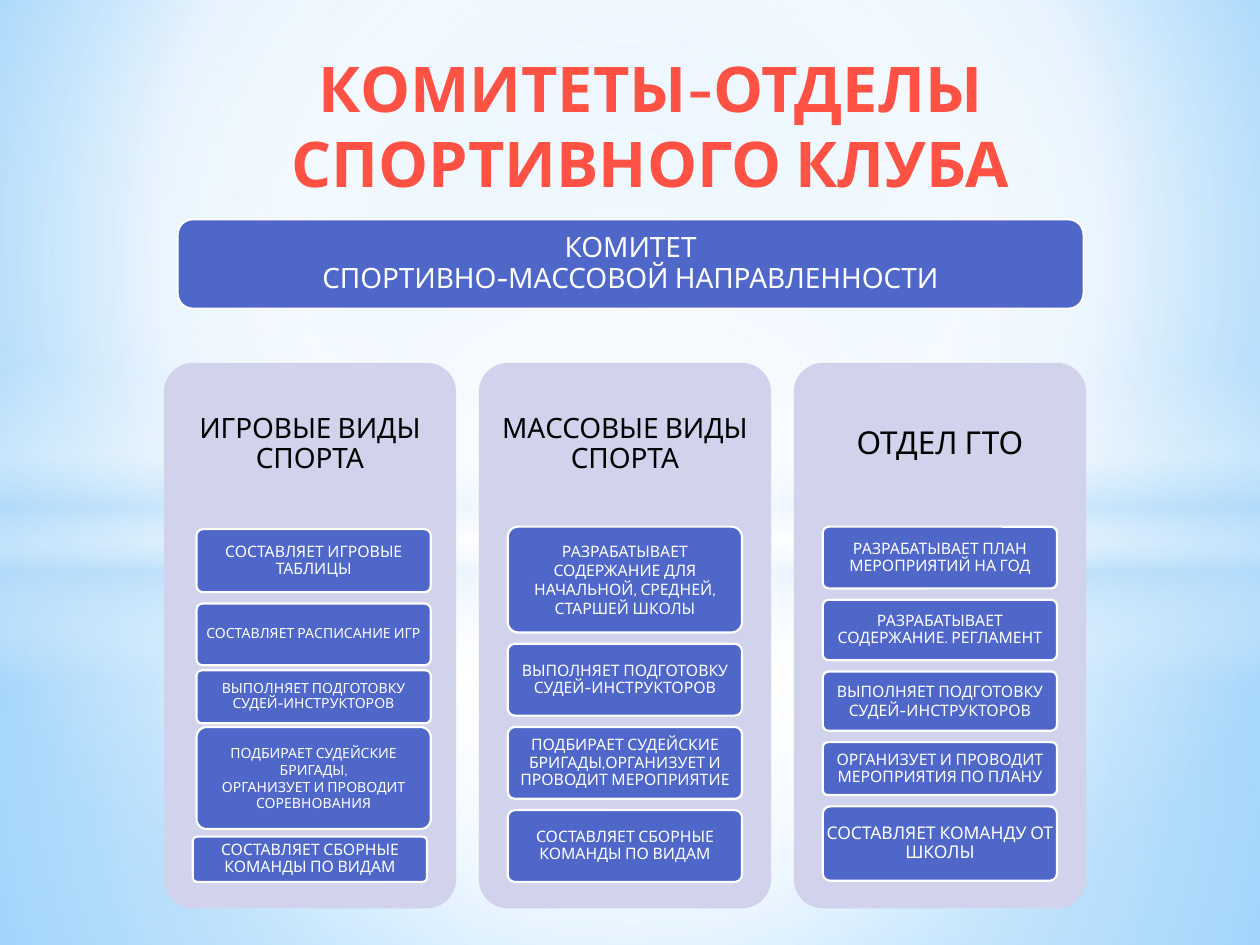
from pptx import Presentation
from pptx.dml.color import RGBColor as RGB
from pptx.enum.shapes import MSO_SHAPE as SHAPE
from pptx.enum.text import MSO_ANCHOR as ANCHOR, PP_ALIGN as ALIGN
from pptx.oxml import parse_xml
from pptx.oxml.ns import nsdecls, qn
from pptx.util import Inches, Pt

C = {"blue": "4E67C8", "card": "D0D3EB", "white": "FFFFFF", "black": "000000",
     "red": "FF5244", "sky": "B4DCFA", "pale": "9ED5FF", "deep": "5BB9FF"}

prs = Presentation()
prs.slide_width, prs.slide_height = Inches(10), Inches(7.5)
U = prs.slide_width / 100
s = prs.slides.add_slide(prs.slide_layouts[5])


def grade(fill, root, stops, rect=None):
    fill.gradient()
    old = next(root.iter(qn("a:gradFill")))
    gs = "".join(f'<a:gs pos="{pos * 1000}"><a:srgbClr val="{C[color]}">'
                 f'<a:alpha val="{alpha * 1000}"/></a:srgbClr></a:gs>'
                 for pos, color, alpha in stops)
    if rect:
        sides = " ".join(f'{side}="{v * 1000}"' for side, v in zip("ltrb", rect))
        way = f'<a:path path="circle"><a:fillToRect {sides}/></a:path>'
    else:
        way = '<a:lin ang="5400000" scaled="0"/>'
    new = parse_xml(f'<a:gradFill {nsdecls("a")} rotWithShape="1">'
                    f'<a:gsLst>{gs}</a:gsLst>{way}</a:gradFill>')
    old.getparent().replace(old, new)


def write(sp, text, size=9, color="white", bold=False, spacing=0.9, indent=0, insets=(0, 0, 0, 0)):
    tf = sp.text_frame
    tf.word_wrap = True
    tf.vertical_anchor = ANCHOR.MIDDLE
    tf.margin_left, tf.margin_top, tf.margin_right, tf.margin_bottom = [int(v * U) for v in insets]
    for i, line in enumerate(text.split("\n")):
        p = tf.paragraphs[0] if i == 0 else tf.add_paragraph()
        p.alignment = ALIGN.CENTER
        p.line_spacing = spacing
        if indent:
            p._p.get_or_add_pPr().set("marL", str(int(indent * U)))
        r = p.add_run()
        r.text = line
        r.font.name = "Cabin"
        r.font.size = Pt(size)
        r.font.bold = bold
        r.font.color.rgb = RGB.from_string(C[color])


grade(s.background.fill, s._element,
      [(0, "pale", 100), (60, "white", 100), (100, "deep", 100)], (20, 10, 20, 60))

center = (50, 50, 50, 50)
glows = [
    (SHAPE.RECTANGLE, 42.3, 32.7, [(0, "white", 91), (37, "white", 76), (100, "sky", 79)], center),
    (SHAPE.RECTANGLE, 0, 42.3, [(0, "white", 89), (48, "white", 62), (100, "sky", 79)], center),
    (SHAPE.RECTANGLE, 29, 25, [(0, "white", 0), (29, "white", 30), (45, "sky", 40),
                               (55, "white", 26), (65, "sky", 60), (100, "white", 0)], None),
    (SHAPE.OVAL, 17.5, 55.8, [(0, "white", 100), (54, "white", 0)], center),
]
for kind, top, height, stops, rect in glows:
    sp = s.shapes.add_shape(kind, 0, int(top * U), prs.slide_width, int(height * U))
    sp.shadow.inherit = False
    sp.line.fill.background()
    grade(sp.fill, sp._element, stops, rect)

title = s.shapes.title
s.shapes._spTree.append(title._element)
title.left, title.top, title.width, title.height = [int(v * U) for v in (11.4, 3.6, 78.5, 12.6)]
write(title, "КОМИТЕТЫ-ОТДЕЛЫ СПОРТИВНОГО КЛУБА", size=36, color="red", bold=True,
      spacing=1, indent=2, insets=(1, 0.5, 1, 0.5))

boxes = [(14.1, 17.4, 71.9, 7.1, 0.17, "blue",
          "КОМИТЕТ\nСПОРТИВНО-МАССОВОЙ НАПРАВЛЕННОСТИ", dict(size=16))]

columns = [
    ("ИГРОВЫЕ ВИДЫ СПОРТА", 16, [15.6] * 4 + [15.3], 42, [0.9, 0.4, 0.3, 0.6, 0], [
        (5, "СОСТАВЛЯЕТ ИГРОВЫЕ ТАБЛИЦЫ", {}),
        (4.9, "СОСТАВЛЯЕТ РАСПИСАНИЕ ИГР", dict(size=8)),
        (4.2, "ВЫПОЛНЯЕТ ПОДГОТОВКУ СУДЕЙ-ИНСТРУКТОРОВ", dict(size=8)),
        (8.1, "ПОДБИРАЕТ СУДЕЙСКИЕ БРИГАДЫ,\nОРГАНИЗУЕТ И ПРОВОДИТ СОРЕВНОВАНИЯ",
         dict(size=8, spacing=1)),
        (3.6, "СОСТАВЛЯЕТ СБОРНЫЕ КОМАНДЫ ПО ВИДАМ", {})]),
    ("МАССОВЫЕ ВИДЫ СПОРТА", 16, [40.3] * 4, 41.8, [0.9] * 4, [
        (8.4, "РАЗРАБАТЫВАЕТ СОДЕРЖАНИЕ ДЛЯ НАЧАЛЬНОЙ, СРЕДНЕЙ, СТАРШЕЙ ШКОЛЫ", dict(spacing=1)),
        (5.7, "ВЫПОЛНЯЕТ ПОДГОТОВКУ СУДЕЙ-ИНСТРУКТОРОВ", {}),
        (5.7, "ПОДБИРАЕТ СУДЕЙСКИЕ БРИГАДЫ,ОРГАНИЗУЕТ И ПРОВОДИТ МЕРОПРИЯТИЕ", {}),
        (5.7, "СОСТАВЛЯЕТ СБОРНЫЕ КОМАНДЫ ПО ВИДАМ", {})]),
    ("ОТДЕЛ ГТО", 18, [65.3] * 5, 41.8, [0.9] * 5, [
        (4.9, "РАЗРАБАТЫВАЕТ ПЛАН МЕРОПРИЯТИЙ НА ГОД", {}),
        (4.8, "РАЗРАБАТЫВАЕТ СОДЕРЖАНИЕ. РЕГЛАМЕНТ", {}),
        (4.7, "ВЫПОЛНЯЕТ ПОДГОТОВКУ СУДЕЙ-ИНСТРУКТОРОВ", dict(spacing=1)),
        (4.2, "ОРГАНИЗУЕТ И ПРОВОДИТ МЕРОПРИЯТИЯ ПО ПЛАНУ", {}),
        (5.9, "СОСТАВЛЯЕТ КОМАНДУ ОТ ШКОЛЫ", dict(size=10))]),
]
for i, (head, size, lefts, top, gaps, tasks) in enumerate(columns):
    boxes.append((13 + 25 * i, 28.8, 23.2, 43.3, 0.1, "card", head,
                  dict(size=size, color="black", insets=(0, 0, 0, 30.3))))
    for left, gap, (height, text, style) in zip(lefts, gaps, tasks):
        boxes.append((left, top, 18.6, height, 0.1, "blue", text, style))
        top += height + gap

for left, top, width, height, corner, fill, text, style in boxes:
    sp = s.shapes.add_shape(SHAPE.ROUNDED_RECTANGLE,
                            *[int(v * U) for v in (left, top, width, height)])
    sp.adjustments[0] = corner
    sp.shadow.inherit = False
    sp.fill.solid()
    sp.fill.fore_color.rgb = RGB.from_string(C[fill])
    if fill == "card":
        sp.line.fill.background()
    else:
        sp.line.color.rgb = RGB.from_string(C["white"])
        sp.line.width = Pt(1.25)
    write(sp, text, **style)

prs.save("out.pptx")
